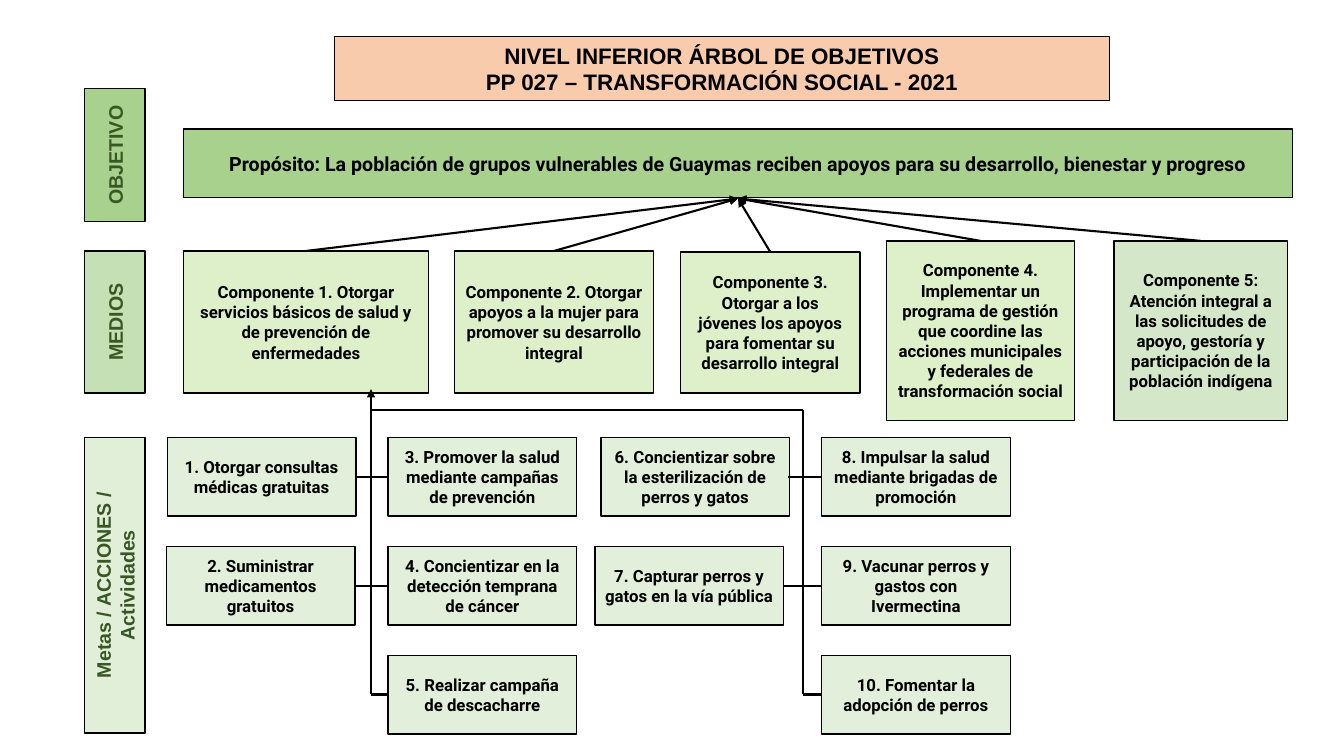
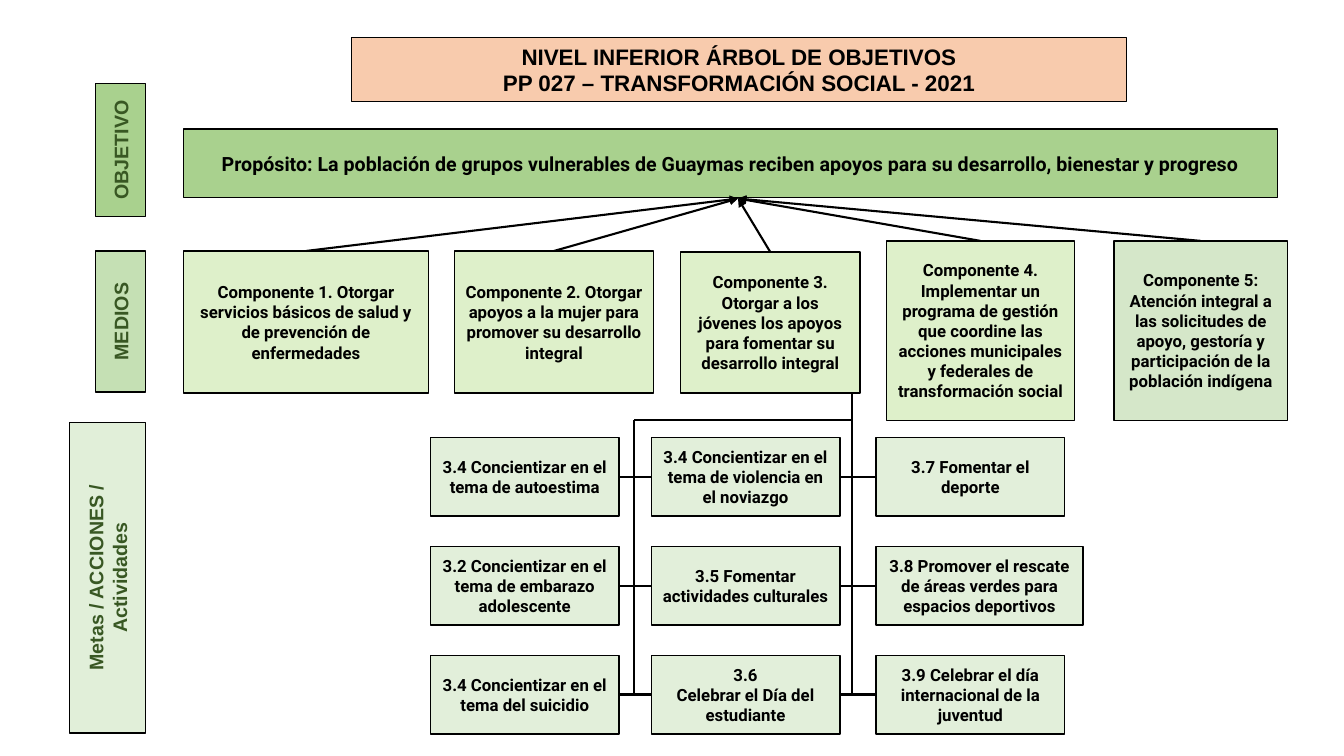
from dataclasses import dataclass

from lxml import etree
from pptx import Presentation
from pptx.dml.color import RGBColor
from pptx.enum.shapes import MSO_CONNECTOR as Connector, MSO_SHAPE as Shape
from pptx.enum.text import MSO_ANCHOR as Anchor, PP_ALIGN as Align
from pptx.oxml.ns import qn
from pptx.util import Inches, Pt


@dataclass
class Activity:
    text: str
    left: float
    row: int
    width: float = 1.87


# Shared look
COLORS = {
    "black": "000000", "label": "385723", "peach": "F8CBAD", "green": "A9D18E",
    "pale": "C5E0B4", "lime": "92D050", "leaf": "70AD47",
}
# Each style: fill, opacity in percent, font, size, text colour, outline width
STYLES = {
    "title": ("peach", 100, "Arial", 16, "black", 0.75),
    "purpose": ("green", 100, "Roboto", 14, "black", 1),
    "component": ("lime", 30, "Roboto", 12, "black", 1),
    "component_last": ("leaf", 29, "Roboto", 12, "black", 1),
    "activity": ("pale", 49, "Roboto", 12, "black", 1),
    "objective_label": ("green", 100, "Arial", 14, "label", 1),
    "means_label": ("pale", 100, "Arial", 14, "label", 1),
    "actions_label": ("pale", 50, "Arial", 14, "label", 1),
}

# Shared content
TITLE = "NIVEL INFERIOR ÁRBOL DE OBJETIVOS\nPP 027 – TRANSFORMACIÓN SOCIAL - 2021"
PURPOSE = ("Propósito: La población de grupos vulnerables de Guaymas reciben "
           "apoyos para su desarrollo, bienestar y progreso")
LABELS = [
    ("OBJETIVO", "objective_label"),
    ("MEDIOS", "means_label"),
    ("Metas / ACCIONES / Actividades", "actions_label"),
]
COMPONENTS = [
    ("Componente 1. Otorgar servicios básicos de salud y de prevención de "
     "enfermedades", (1.82, 2.49, 2.43, 1.41), "component"),
    ("Componente 2. Otorgar apoyos a la mujer para promover su desarrollo "
     "integral", (4.51, 2.49, 1.97, 1.41), "component"),
    ("Componente 3. Otorgar a los jóvenes los apoyos para fomentar su "
     "desarrollo integral", (6.75, 2.5, 1.78, 1.4), "component"),
    ("Componente 4. Implementar un programa de gestión que coordine las "
     "acciones municipales y federales de transformación social",
     (8.79, 2.39, 1.87, 1.78), "component"),
    ("Componente 5: Atención integral a las solicitudes de apoyo, gestoría y "
     "participación de la población indígena",
     (11.05, 2.39, 1.72, 1.78), "component_last"),
]
PURPOSE_LEFT, PURPOSE_TOP, PURPOSE_HEIGHT = 1.82, 1.28, 0.68
ARROW_TARGET = (7.32, 1.97)
ROW_TOP, ROW_PITCH, ROW_HEIGHT = 4.34, 1.08, 0.78
ROW_CENTERS = [ROW_TOP + row * ROW_PITCH + ROW_HEIGHT / 2 for row in range(3)]
BOTTOM = ROW_CENTERS[-1]

# What differs: labels and trunks are in inches, spurs are (row, from, to)
SLIDES = [
    {
        "title_at": (3.32, 0.36),
        "purpose_width": 11,
        "labels": [(0.84, 0.88, 0.6, 1.32), (0.84, 2.49, 0.6, 1.41),
                   (0.84, 4.34, 0.6, 2.93)],
        "activities": [
            Activity("1. Otorgar consultas médicas gratuitas", 1.66, 0),
            Activity("2. Suministrar medicamentos gratuitos", 1.65, 1),
            Activity("3. Promover la salud mediante campañas de prevención", 3.85, 0),
            Activity("4. Concientizar en la detección temprana de cáncer", 3.85, 1),
            Activity("5. Realizar campaña de descacharre", 3.85, 2),
            Activity("6. Concientizar sobre la esterilización de perros y gatos", 5.96, 0),
            Activity("7. Capturar perros y gatos en la vía pública", 5.9, 1),
            Activity("8. Impulsar la salud mediante brigadas de promoción", 8.15, 0),
            Activity("9. Vacunar perros y gastos con Ivermectina", 8.15, 1),
            Activity("10. Fomentar la adopción de perros", 8.15, 2),
        ],
        "trunks": [
            ((3.68, BOTTOM), (3.68, 3.86), True),
            ((7.96, 4.07), (3.68, 4.07), False),
            ((7.96, 4.07), (7.96, BOTTOM), False),
        ],
        "spurs": [(0, 3.52, 3.85), (1, 3.52, 3.85), (2, 3.68, 3.85),
                  (0, 7.82, 8.15), (1, 7.77, 8.15), (2, 7.96, 8.15)],
    },
    {
        "title_at": (3.49, 0.37),
        "purpose_width": 10.85,
        "labels": [(0.95, 0.83, 0.49, 1.32), (0.95, 2.49, 0.49, 1.4),
                   (0.69, 4.19, 0.75, 3.08)],
        "activities": [
            Activity("3.4 Concientizar en el tema de autoestima", 4.27, 0),
            Activity("3.2 Concientizar en el tema de embarazo adolescente", 4.27, 1),
            Activity("3.4 Concientizar en el tema del suicidio", 4.27, 2),
            Activity("3.4 Concientizar en el tema de violencia en el noviazgo", 6.46, 0),
            Activity("3.5 Fomentar actividades culturales", 6.46, 1),
            Activity("3.6\nCelebrar el Día del estudiante", 6.46, 2),
            Activity("3.7 Fomentar el deporte", 8.69, 0),
            Activity("3.8 Promover el rescate de áreas verdes para espacios "
                     "deportivos", 8.69, 1, 2.05),
            Activity("3.9 Celebrar el día internacional de la juventud", 8.69, 2),
        ],
        "trunks": [
            ((8.45, BOTTOM), (8.45, 3.9), False),
            ((6.29, BOTTOM), (6.29, 4.17), False),
            ((8.45, 4.17), (6.29, 4.17), False),
        ],
        "spurs": [(row, start, end) for row in range(3)
                  for start, end in ((6.13, 6.46), (8.33, 8.69))],
    },
]


def color(name):
    return RGBColor.from_string(COLORS[name])


def add_box(slide, text, box, style, kind=Shape.FLOWCHART_PROCESS):
    fill, opacity, font_name, size, text_color, outline = STYLES[style]
    shape = slide.shapes.add_shape(kind, *map(Inches, box))
    shape.shadow.inherit = False
    shape.fill.solid()
    shape.fill.fore_color.rgb = color(fill)
    if opacity < 100:
        fill_color = shape.fill._xPr.find(qn("a:solidFill"))[0]
        etree.SubElement(fill_color, qn("a:alpha"), val=str(opacity * 1000))
    shape.line.color.rgb = color("black")
    shape.line.width = Pt(outline)

    frame = shape.text_frame
    frame.word_wrap = True
    frame.vertical_anchor = Anchor.MIDDLE
    frame.text = text
    font_format = {"name": font_name, "size": Pt(size), "bold": True}
    for paragraph in frame.paragraphs:
        paragraph.alignment = Align.CENTER
        for run in paragraph.runs:
            for attribute, value in font_format.items():
                setattr(run.font, attribute, value)
            run.font.color.rgb = color(text_color)
    return shape


def add_side_label(slide, text, box, style):
    """Place a label that reads upwards and covers the given upright box."""
    left, top, width, height = box
    shift = (height - width) / 2
    shape = add_box(slide, text, (left - shift, top + shift, height, width), style)
    shape.rotation = 270


def add_line(slide, start, end, arrow=False):
    connector = slide.shapes.add_connector(
        Connector.STRAIGHT, *map(Inches, start + end))
    connector.line.color.rgb = color("black")
    connector.line.width = Pt(1.5)
    if arrow:
        etree.SubElement(connector.line._get_or_add_ln(), qn("a:tailEnd"),
                         type="triangle")
    etree.SubElement(connector._element.spPr, qn("a:effectLst"))


def build_slide(presentation, content):
    slide = presentation.slides.add_slide(presentation.slide_layouts[6])

    # Title, purpose and side labels
    add_box(slide, TITLE, content["title_at"] + (7.68, 0.64), "title",
            Shape.RECTANGLE)
    add_box(slide, PURPOSE, (PURPOSE_LEFT, PURPOSE_TOP, content["purpose_width"],
                             PURPOSE_HEIGHT), "purpose")
    for (text, style), box in zip(LABELS, content["labels"]):
        add_side_label(slide, text, box, style)

    # Components, each pointing at the purpose
    for text, box, style in COMPONENTS:
        add_box(slide, text, box, style)
        left, top, width, _ = box
        add_line(slide, (left + width / 2, top), ARROW_TARGET, arrow=True)

    # Activities on three rows
    for activity in content["activities"]:
        top = ROW_TOP + activity.row * ROW_PITCH
        add_box(slide, activity.text,
                (activity.left, top, activity.width, ROW_HEIGHT), "activity")

    # Branching lines
    for start, end, arrow in content["trunks"]:
        add_line(slide, start, end, arrow)
    for row, start, end in content["spurs"]:
        add_line(slide, (start, ROW_CENTERS[row]), (end, ROW_CENTERS[row]))


def main():
    presentation = Presentation()
    presentation.slide_width = Inches(13.33)
    presentation.slide_height = Inches(7.5)
    for content in SLIDES:
        build_slide(presentation, content)
    presentation.save("out.pptx")


if __name__ == "__main__":
    main()
